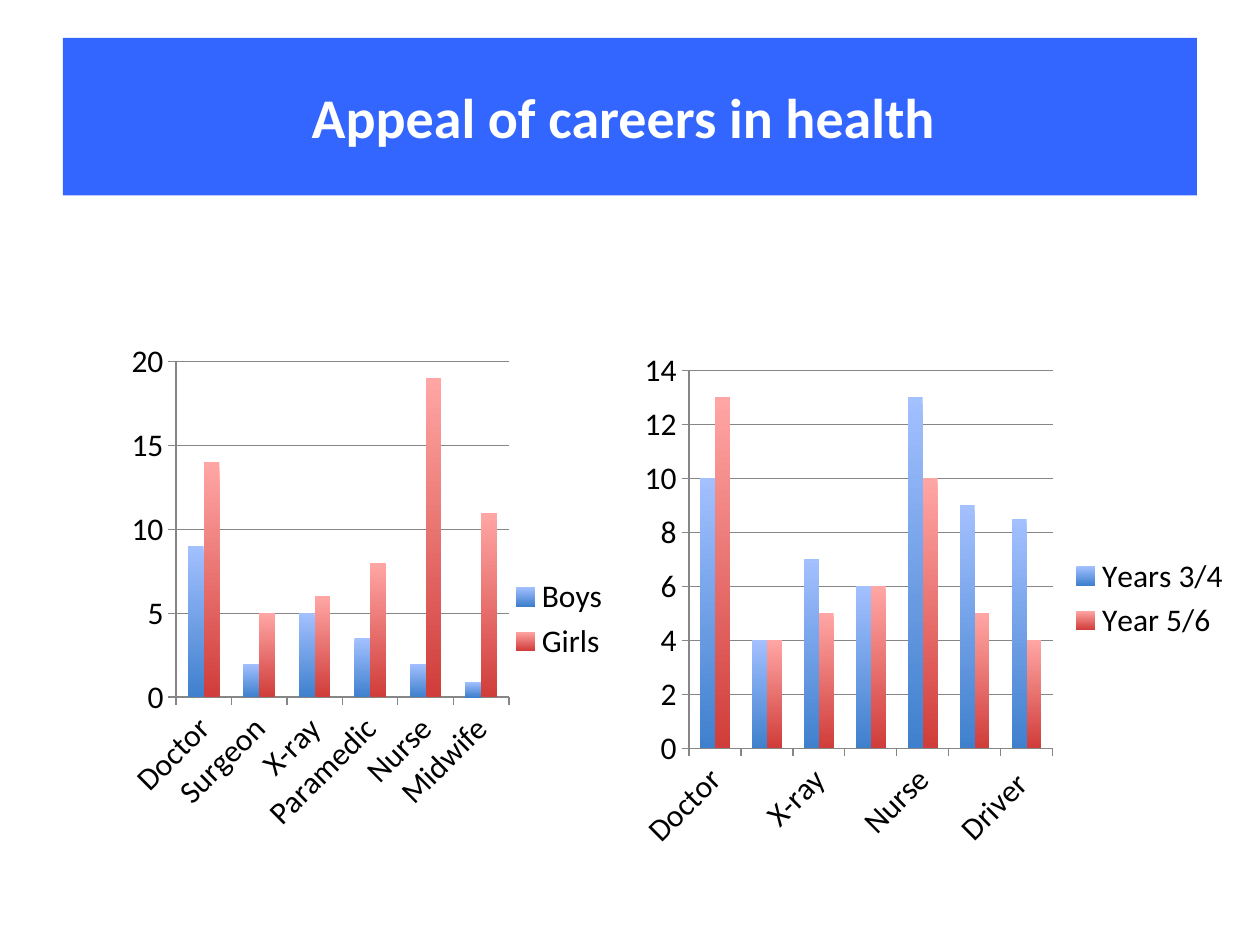
from pptx import Presentation
from pptx.chart.data import CategoryChartData
from pptx.dml.color import RGBColor
from pptx.enum.chart import XL_CHART_TYPE, XL_LEGEND_POSITION, XL_TICK_MARK
from pptx.enum.shapes import MSO_SHAPE
from pptx.enum.text import MSO_ANCHOR, PP_ALIGN
from pptx.oxml import parse_xml
from pptx.oxml.ns import nsdecls
from pptx.util import Inches, Pt

COLUMNS = XL_CHART_TYPE.COLUMN_CLUSTERED
LEGEND_RIGHT = XL_LEGEND_POSITION.RIGHT
TICK_OUTSIDE = XL_TICK_MARK.OUTSIDE
RECTANGLE = MSO_SHAPE.RECTANGLE
MIDDLE = MSO_ANCHOR.MIDDLE
CENTER = PP_ALIGN.CENTER

BANNER_BLUE = RGBColor(0x33, 0x66, 0xFF)
WHITE = RGBColor(0xFF, 0xFF, 0xFF)
BLACK = RGBColor(0x00, 0x00, 0x00)
AXIS_GREY = RGBColor(0x86, 0x86, 0x86)
SERIES_GRADIENTS = (
    (RGBColor(0xA3, 0xC0, 0xFF), RGBColor(0x3F, 0x80, 0xCD)),
    (RGBColor(0xFF, 0xA6, 0xA4), RGBColor(0xD0, 0x3D, 0x3A)),
)
FONT = "Calibri"

PAGE_WIDTH, PAGE_HEIGHT = Inches(10), Inches(7.5)
TITLE_BOX = (0.05, 0.04, 0.9, 1 / 6)
GENDER_BOX = (0.05, 0.359, 0.448, 0.592)
YEAR_BOX = (0.498, 0.359, 0.489, 0.548)
GENDER_PLOT = (0.2, 0.04, 0.59, 0.6)
YEAR_PLOT = (0.1, 0.06, 0.59, 0.73)

CAREERS = ["Doctor", "Surgeon", "X-ray", "Paramedic", "Nurse", "Midwife"]
GENDER_SCORES = {"Boys": (9, 2, 5, 3.5, 2, 0.9), "Girls ": (14, 5, 6, 8, 19, 11)}
YEAR_SCORES = {
    "Years 3/4": (10, 4, 7, 6, 13, 9, 8.5),
    "Year 5/6": (13, 4, 5, 6, 10, 5, 4),
}


def place(box):
    """Turn shares of the page into left, top, width and height."""
    sizes = (PAGE_WIDTH, PAGE_HEIGHT) * 2
    return [round(share * size) for share, size in zip(box, sizes)]


def add_title(page, box, text):
    """Add the banner with its centred heading."""
    banner = page.shapes.add_shape(RECTANGLE, *place(box))
    banner.shadow.inherit = False
    banner.fill.solid()
    banner.fill.fore_color.rgb = BANNER_BLUE
    banner.line.fill.background()
    frame = banner.text_frame
    frame.text = text
    frame.vertical_anchor = MIDDLE
    para = frame.paragraphs[0]
    para.alignment = CENTER
    font = para.runs[0].font
    font.name, font.size, font.bold = FONT, Pt(32), True
    font.color.rgb = WHITE


def set_plot_area(chart, plot_box):
    """Fix the inner plot area as shares of the chart."""
    plot_area = chart.plots[0]._element.getparent()
    for layout in plot_area.findall("{*}layout"):
        plot_area.remove(layout)
    modes = "".join(f'<c:{side}Mode val="edge"/>' for side in "xy")
    shares = "".join(
        f'<c:{side} val="{share}"/>' for side, share in zip("xywh", plot_box)
    )
    plot_area.insert(0, parse_xml(
        f'<c:layout {nsdecls("c")}><c:manualLayout><c:layoutTarget val="inner"/>'
        f"{modes}{shares}</c:manualLayout></c:layout>"
    ))


def style_axes(chart):
    """Give both axes outside ticks and grey lines."""
    for axis in (chart.category_axis, chart.value_axis):
        axis.major_tick_mark = TICK_OUTSIDE
        axis.format.line.color.rgb = AXIS_GREY
    chart.category_axis.has_major_gridlines = False
    chart.value_axis.has_major_gridlines = True
    chart.value_axis.major_gridlines.format.line.color.rgb = AXIS_GREY


def add_career_chart(page, box, plot_box, careers, scores):
    """Add a column chart that compares two groups of pupils."""
    data = CategoryChartData()
    data.categories = careers
    for group, values in scores.items():
        data.add_series(group, values)
    chart = page.shapes.add_chart(COLUMNS, *place(box), data).chart
    chart.has_title = False
    chart.font.name, chart.font.size = FONT, Pt(18)
    chart.font.color.rgb = BLACK
    chart.has_legend = True
    chart.legend.position = LEGEND_RIGHT
    chart.legend.include_in_layout = False
    plot = chart.plots[0]
    plot.gap_width, plot.overlap = 150, 0
    plot.vary_by_categories = False
    for series, colors in zip(plot.series, SERIES_GRADIENTS):
        series.invert_if_negative = False
        fill = series.format.fill
        fill.gradient()
        fill.gradient_angle = 270
        for stop, color in zip(fill.gradient_stops, colors):
            stop.color.rgb = color
    style_axes(chart)
    set_plot_area(chart, plot_box)


def main():
    """Build the page and save the deck."""
    deck = Presentation()
    deck.slide_width, deck.slide_height = PAGE_WIDTH, PAGE_HEIGHT
    page = deck.slides.add_slide(deck.slide_layouts[6])
    add_title(page, TITLE_BOX, "Appeal of careers in health ")
    add_career_chart(page, GENDER_BOX, GENDER_PLOT, CAREERS, GENDER_SCORES)
    add_career_chart(page, YEAR_BOX, YEAR_PLOT, CAREERS + ["Driver "], YEAR_SCORES)
    deck.save("out.pptx")


if __name__ == "__main__":
    main()
